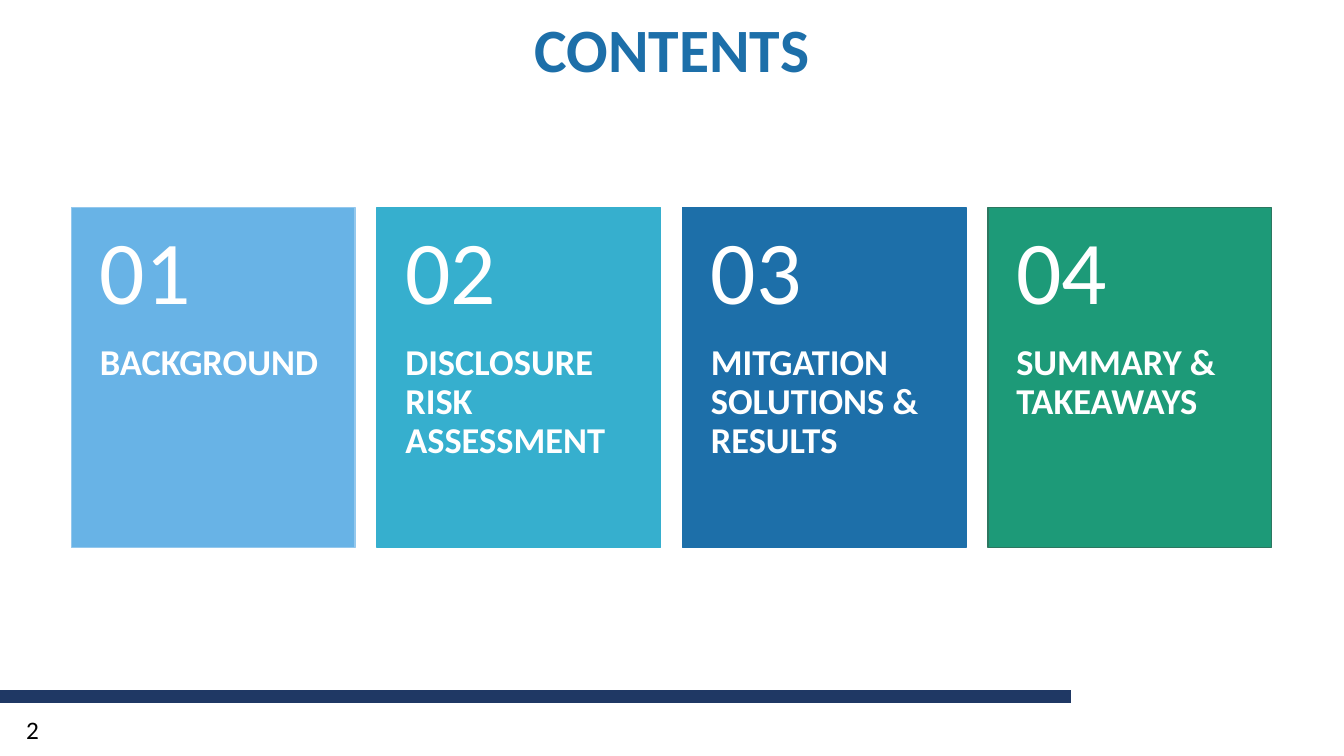
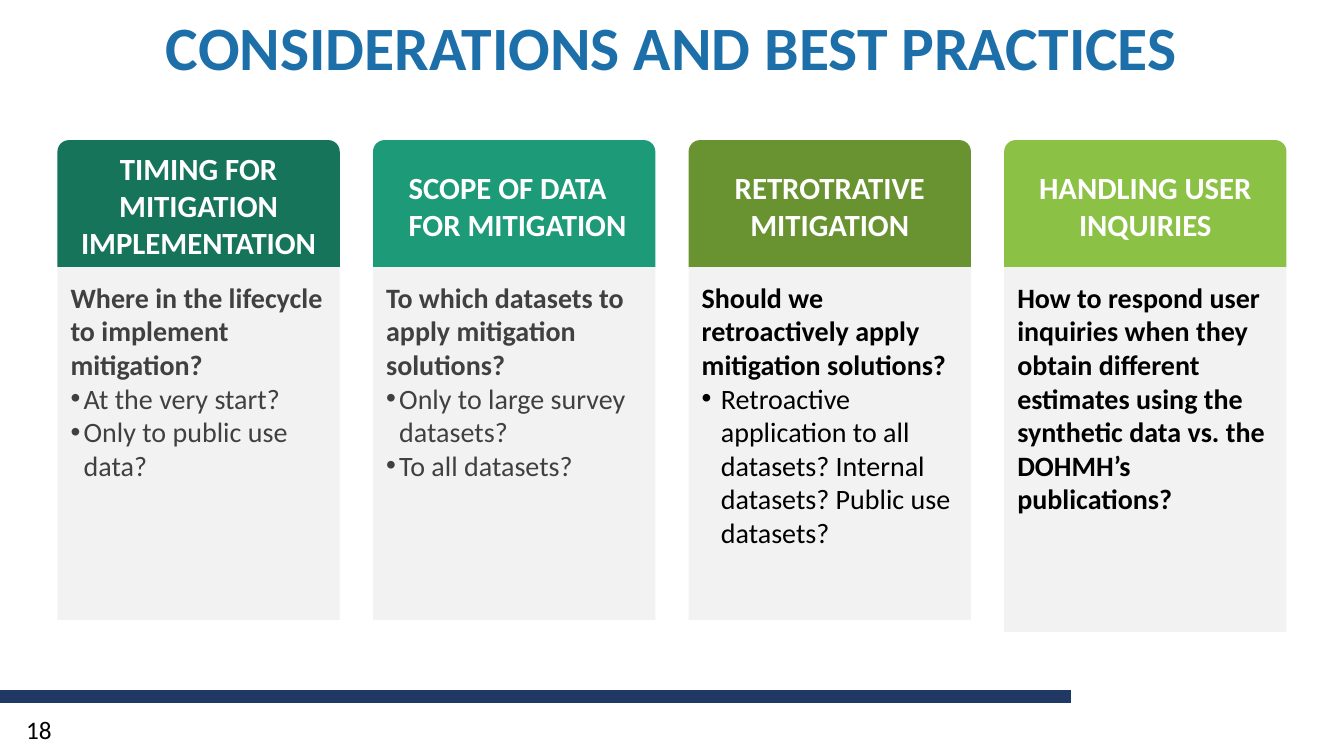
from dataclasses import dataclass

from lxml import etree
from pptx import Presentation
from pptx import util as u
from pptx.dml.color import RGBColor
from pptx.enum import shapes, text
from pptx.oxml import ns

FONT = "Calibri"
WHITE, BLACK, GREY, PANEL = "FFFFFF", "000000", "404040", "F2F2F2"
BLUE, NAVY, GREEN = "1D6FA9", "1F3864", "1D9A78"
WIDTH, HEIGHT = 13.33, 7.5
LEFT, CENTER = text.PP_ALIGN.LEFT, text.PP_ALIGN.CENTER
TOP, MIDDLE = text.MSO_ANCHOR.TOP, text.MSO_ANCHOR.MIDDLE


@dataclass(frozen=True)
class Columns:
    left: float
    width: float
    gap: float

    def x(self, i: int) -> float:
        return self.left + i * (self.width + self.gap)


@dataclass(frozen=True)
class Tile:
    label: str
    fill: str
    border: str


@dataclass(frozen=True)
class Card:
    heading: str
    fill: str
    question: str
    bullets: tuple[str, ...] = ()
    color: str = GREY
    indent: float = 0.13
    height: float = 3.5
    align: text.PP_ALIGN = CENTER
    inset: float = 0.13


TILE_GRID = Columns(0.71, 2.81, 0.22)
CARD_GRID = Columns(0.57, 2.8, 0.33)

TILES = (
    Tile("BACKGROUND", "68B3E6", "94C8ED"),
    Tile("DISCLOSURE RISK ASSESSMENT", "36AFCE", "36AFCE"),
    Tile("MITGATION SOLUTIONS & RESULTS", BLUE, BLUE),
    Tile("SUMMARY & TAKEAWAYS", GREEN, "2D7760"),
)

CARDS = (
    Card("TIMING FOR MITIGATION IMPLEMENTATION", "16745A",
         "Where in the lifecycle to implement mitigation?",
         ("At the very start?", "Only to public use data?")),
    Card("SCOPE OF DATA FOR MITIGATION", GREEN,
         "To which datasets to apply mitigation solutions?",
         ("Only to large survey datasets?", "To all datasets?"),
         align=LEFT, inset=0.32),
    Card("RETROTRATIVE MITIGATION", "699331",
         "Should we retroactively apply mitigation solutions?",
         ("Retroactive application to all datasets? Internal datasets? Public use datasets?",),
         color=BLACK, indent=0.19),
    Card("HANDLING USER INQUIRIES", "8BC145",
         "How to respond user inquiries when they obtain different estimates "
         "using the synthetic data vs. the DOHMH’s publications?",
         color=BLACK, height=3.62),
)


def rgb(value: str) -> RGBColor:
    return RGBColor.from_string(value)


def box(left: float, top: float, width: float, height: float) -> tuple:
    return tuple(u.Inches(n) for n in (left, top, width, height))


def frame(sp, insets: tuple = (0.1, 0.05, 0.1, 0.05), anchor=TOP):
    tf = sp.text_frame
    tf.word_wrap = True
    tf.vertical_anchor = anchor
    tf.margin_left, tf.margin_top, tf.margin_right, tf.margin_bottom = box(*insets)
    return tf


def write(p, words: str, size: float, color: str, bold: bool = False,
          align=LEFT, spacing: float = 1.0) -> None:
    p.alignment = align
    p.line_spacing = spacing
    r = p.add_run()
    r.text = words
    r.font.name = FONT
    r.font.size = u.Pt(size)
    r.font.bold = bold
    r.font.color.rgb = rgb(color)


def bullet(p, indent: float) -> None:
    pr = p._p.get_or_add_pPr()
    pr.set("marL", str(u.Inches(indent)))
    pr.set("indent", str(-u.Inches(indent)))
    etree.SubElement(pr, ns.qn("a:buFont")).set("typeface", "Arial")
    etree.SubElement(pr, ns.qn("a:buChar")).set("char", "•")


def add_block(group, kind, place: tuple, fill: str, border: str | None = None):
    sp = group.shapes.add_shape(kind, *box(*place))
    sp.shadow.inherit = False
    sp.fill.solid()
    sp.fill.fore_color.rgb = rgb(fill)
    if border:
        sp.line.color.rgb = rgb(border)
        sp.line.width = u.Pt(1)
    else:
        sp.line.fill.background()
    return sp


def add_band(prs, s) -> None:
    y = u.Inches(6.91)
    line = s.shapes.add_connector(shapes.MSO_CONNECTOR.STRAIGHT, 0, y, u.Inches(10.62), y)
    line.line.color.rgb = rgb(NAVY)
    line.line.width = u.Pt(9.75)
    etree.SubElement(line.element.spPr, ns.qn("a:effectLst"))
    line.element.xpath(".//p:cNvPr")[0].set("id", "20")
    prs.slide_master.shapes.element.append(line.element)


def add_slide(prs, title: str, number: int, top: float = 0):
    s = prs.slides.add_slide(prs.slide_layouts[5])
    sp = s.shapes.title
    sp.left, sp.top, sp.width, sp.height = box(0, top, WIDTH, 1)
    tf = frame(sp, anchor=MIDDLE)
    write(tf.paragraphs[0], title, 44, BLUE, True, CENTER, 0.9)
    tf = frame(s.shapes.add_textbox(*box(0.16, 7.04, 0.52, 0.4)))
    write(tf.paragraphs[0], str(number), 18, BLACK)
    return s


def add_tile(s, i: int, tile: Tile) -> None:
    x, w = TILE_GRID.x(i), TILE_GRID.width
    group = s.shapes.add_group_shape()
    add_block(group, shapes.MSO_SHAPE.RECTANGLE, (x, 2.06, w, 3.37), tile.fill, tile.border)
    sp = group.shapes.add_textbox(*box(x, 3.41, w, 2.02))
    tf = frame(sp, (0.28, 0, 0.28, 0.36))
    write(tf.paragraphs[0], tile.label, 26, WHITE, True, spacing=0.9)
    sp = group.shapes.add_textbox(*box(x, 2.06, w, 1.35))
    tf = frame(sp, (0.28, 0.18, 0.28, 0.18), MIDDLE)
    write(tf.paragraphs[0], f"{i + 1:02}", 64, WHITE, spacing=0.9)


def add_card(s, i: int, card: Card) -> None:
    x, w = CARD_GRID.x(i), CARD_GRID.width
    group = s.shapes.add_group_shape()
    sp = add_block(group, shapes.MSO_SHAPE.ROUND_2_SAME_RECTANGLE, (x, 1.39, w, 1.26), card.fill)
    sp.adjustments[0], sp.adjustments[1] = 0.09, 0
    tf = frame(sp, (card.inset, 0.07, 0.13, 0.07), MIDDLE)
    write(tf.paragraphs[0], card.heading, 22, WHITE, True, card.align)
    sp = add_block(group, shapes.MSO_SHAPE.RECTANGLE, (x, 2.65, w, card.height), PANEL)
    tf = frame(sp, (0.13, 0.13, 0.13, 0.07))
    write(tf.paragraphs[0], card.question, 20, card.color, True)
    for item in card.bullets:
        p = tf.add_paragraph()
        bullet(p, card.indent)
        write(p, item, 20, card.color)


def main() -> None:
    prs = Presentation()
    prs.slide_width, prs.slide_height = u.Inches(WIDTH), u.Inches(HEIGHT)

    s = add_slide(prs, "CONTENTS", 2, 0.02)
    add_band(prs, s)
    for i, tile in enumerate(TILES):
        add_tile(s, i, tile)

    s = add_slide(prs, "CONSIDERATIONS AND BEST PRACTICES", 18)
    for i, card in enumerate(CARDS):
        add_card(s, i, card)

    prs.save("out.pptx")


if __name__ == "__main__":
    main()
